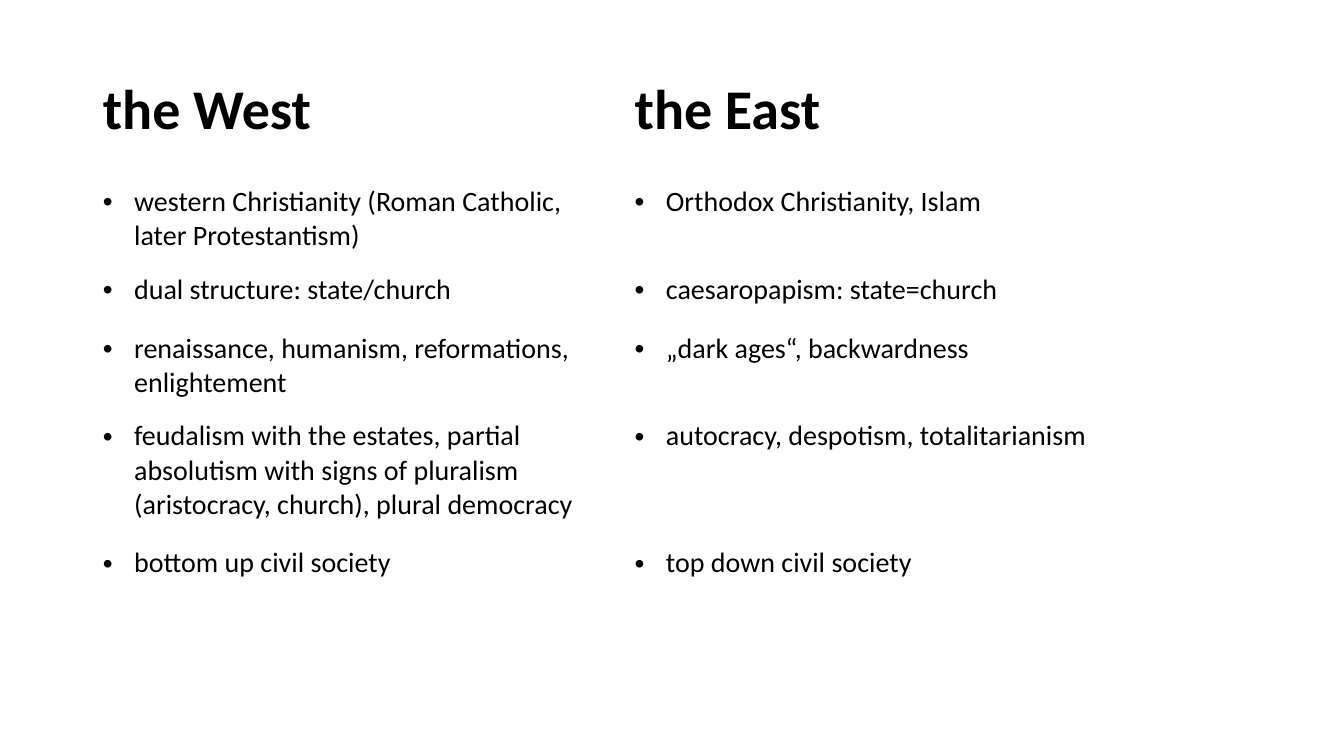
from lxml import etree
from pptx import Presentation
from pptx.dml.color import RGBColor
from pptx.oxml.ns import qn
from pptx.util import Inches, Pt

BLANK_LAYOUT = 6
FONT = "Calibri"
BLACK = "000000"
INDENT = Inches(0.31)
HEADINGS = ("the West", "the East")
CONTRASTS = [
    ("western Christianity (Roman Catholic, later Protestantism)",
     "Orthodox Christianity, Islam"),
    ("dual structure: state/church", "caesaropapism: state=church"),
    ("renaissance, humanism, reformations, enlightement",
     "„dark ages“, backwardness"),
    ("feudalism with the estates, partial absolutism with signs of pluralism "
     "(aristocracy, church), plural democracy",
     "autocracy, despotism, totalitarianism"),
    ("bottom up civil society", "top down civil society"),
]
ROW_HEIGHTS = (1.07, 0.88, 0.58, 0.87, 1.26, 1.11)


def color(hex_code):
    """Turn a hex string into a colour."""
    return RGBColor.from_string(hex_code)


def add_bullet(paragraph):
    """Give a paragraph a hanging round bullet."""
    properties = paragraph._p.get_or_add_pPr()
    properties.set("marL", str(INDENT))
    properties.set("indent", str(-INDENT))
    etree.SubElement(properties, qn("a:buFont"), typeface="Arial")
    etree.SubElement(properties, qn("a:buChar"), char="•")


def fill_cell(cell, wording, is_heading):
    """Write a heading or a bulleted point into a clear cell."""
    cell.fill.background()
    cell.text = wording
    paragraph = cell.text_frame.paragraphs[0]
    if not is_heading:
        add_bullet(paragraph)
    font = paragraph.font
    font.name = FONT
    font.size = Pt(40 if is_heading else 20)
    font.bold = is_heading
    font.color.rgb = color(BLACK)


def add_comparison(slide, left, top, width):
    """Place the two-column comparison of West and East."""
    rows = [HEADINGS, *CONTRASTS]
    comparison = slide.shapes.add_table(
        len(rows), len(HEADINGS), Inches(left), Inches(top),
        Inches(width), Inches(sum(ROW_HEIGHTS))).table
    comparison.first_row = False
    comparison.horz_banding = False
    for row_index, (row, height) in enumerate(zip(rows, ROW_HEIGHTS)):
        comparison.rows[row_index].height = Inches(height)
        for column_index, wording in enumerate(row):
            fill_cell(comparison.cell(row_index, column_index), wording, row_index == 0)


def main():
    """Build and save the presentation."""
    presentation = Presentation()
    presentation.slide_width = Inches(13.33)
    presentation.slide_height = Inches(7.5)
    slide = presentation.slides.add_slide(presentation.slide_layouts[BLANK_LAYOUT])
    add_comparison(slide, left=0.92, top=0.71, width=10.55)
    presentation.save("out.pptx")


if __name__ == "__main__":
    main()
